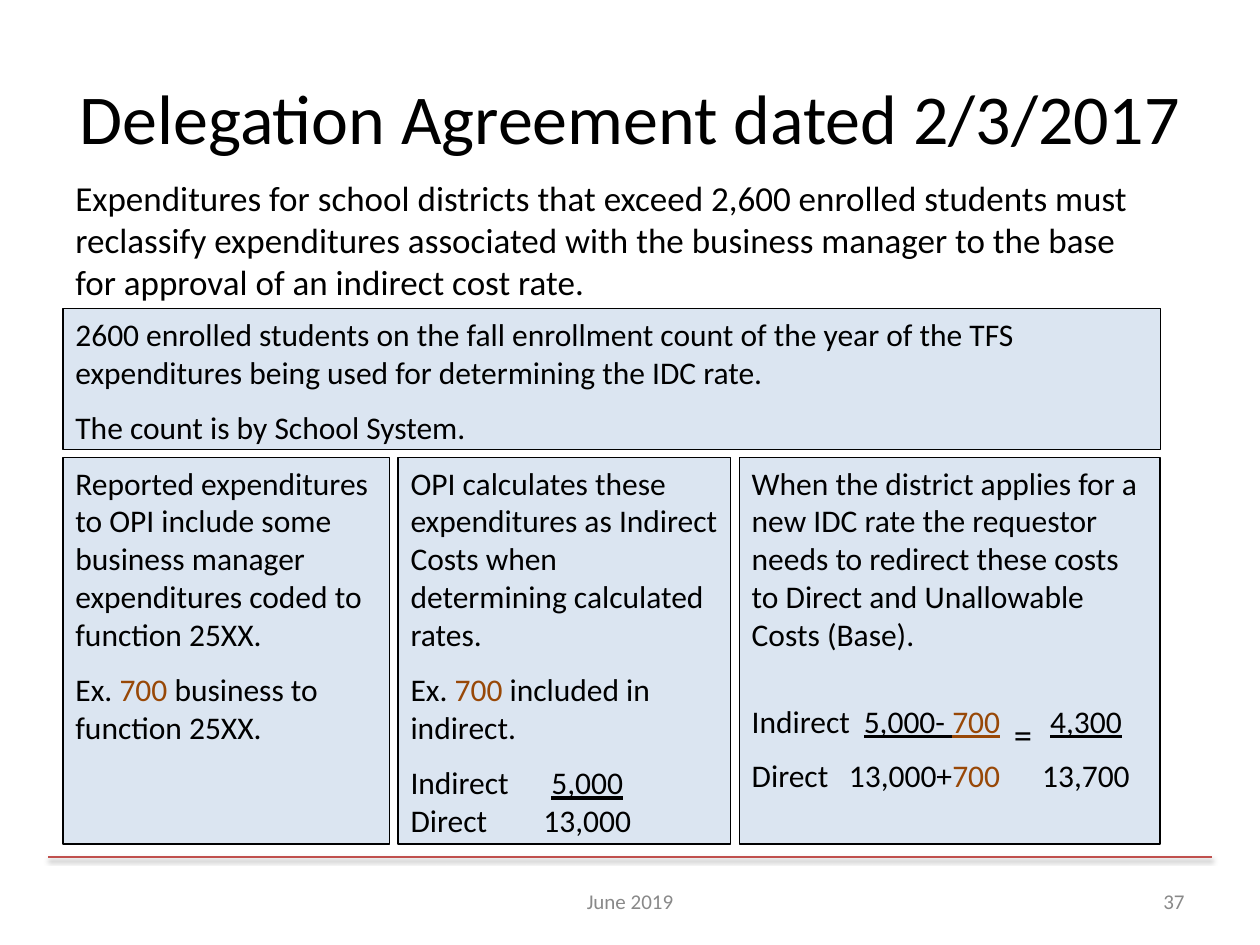
from lxml.etree import SubElement
from pptx import Presentation
from pptx.dml.color import RGBColor
from pptx.enum.shapes import MSO_CONNECTOR, MSO_SHAPE
from pptx.enum.text import MSO_ANCHOR, PP_ALIGN
from pptx.oxml.ns import qn
from pptx.util import Pt

BLACK = RGBColor(0x00, 0x00, 0x00)
GREY = RGBColor(0x89, 0x89, 0x89)
PALE_BLUE = RGBColor(0xDB, 0xE5, 0xF1)
BROWN = RGBColor(0x98, 0x48, 0x07)
RED = RGBColor(0xC0, 0x50, 0x4D)
FONT = "Calibri"

# Content: a paragraph is a list of (text, style) pieces; "\n" breaks the line
TITLE = "Delegation Agreement dated 2/3/2017"
INTRO = ("Expenditures for school districts that exceed 2,600 enrolled students must "
         "reclassify expenditures associated with the business manager to the base "
         "for approval of an indirect cost rate.")
COUNT_RULE = [
    [("2600 enrolled students on the fall enrollment count of the year of the TFS "
      "expenditures being used for determining the IDC rate.", "")],
    [("The count is by School System.", "")],
]
REPORTED = [
    [("Reported expenditures to OPI include some business manager expenditures "
      "coded to function 25XX.", "")],
    [("Ex. ", ""), ("700", "brown"), (" business to function 25XX.", "")],
]
CALCULATED = [
    [("OPI calculates these expenditures as Indirect Costs when determining "
      "calculated rates.", "")],
    [("Ex. ", ""), ("700", "brown"), (" included in indirect.", "")],
    [("Indirect\t", ""), ("5,000", "underline"), ("\n", ""), ("Direct\t13,000", "")],
]
REDIRECTED = [
    [("When the district applies for a new IDC rate the requestor needs to redirect "
      "these costs to Direct and Unallowable Costs (Base).", "")],
    [("Indirect\t", ""), ("5,000- ", "underline"), ("700", "brown underline"),
     ("\t", ""), ("=", "equals"), ("\t", ""), ("4,300", "underline"), ("\n", ""),
     ("Direct\t13,000+", ""), ("700", "brown"), ("\t\t13,700", "")],
]
# Columns: paragraphs, width, tab stops of the fraction
COLUMNS = [
    (REPORTED, 186.5, []),
    (CALCULATED, 190, [(101, "ctr")]),
    (REDIRECTED, 240.5, [(142, "r"), (155, "ctr"), (191, "ctr")]),
]
# Footer: text, left, alignment
FOOTER = [("June 2019", 276, PP_ALIGN.CENTER), ("37", 516, PP_ALIGN.RIGHT)]

LEFT, GAP = 36, 5
COUNT_TOP, COUNT_HEIGHT = 176.4, 80.6
COLUMN_TOP, COLUMN_HEIGHT = 261.4, 221
FULL_WIDTH = sum(width for _, width, _ in COLUMNS) + GAP * (len(COLUMNS) - 1)


def set_font(font, size, color):
    font.name, font.size = FONT, Pt(size)
    font.color.rgb = color


def add_label(slide, text, box, size, color, align, anchor):
    frame = slide.shapes.add_textbox(*map(Pt, box)).text_frame
    frame.word_wrap = True
    frame.vertical_anchor = anchor
    frame.text = text
    frame.paragraphs[0].alignment = align
    set_font(frame.paragraphs[0].runs[0].font, size, color)


def add_tabs(paragraph, stops):
    tab_list = SubElement(paragraph._p.get_or_add_pPr(), qn("a:tabLst"))
    for position, align in stops:
        SubElement(tab_list, qn("a:tab"), pos=str(Pt(position)), algn=align)


def add_piece(paragraph, text, style):
    if text == "\n":
        paragraph.add_line_break()
        return
    run = paragraph.add_run()
    run.text = text
    set_font(run.font, 36 if style == "equals" else 18,
             BROWN if "brown" in style else BLACK)
    if "underline" in style:
        run.font.underline = True
    if style == "equals":
        run._r.get_or_add_rPr().set("baseline", "-24000")


def add_panel(slide, paragraphs, box, stops=()):
    panel = slide.shapes.add_shape(MSO_SHAPE.RECTANGLE, *map(Pt, box))
    panel.shadow.inherit = False
    panel.fill.solid()
    panel.fill.fore_color.rgb = PALE_BLUE
    panel.line.color.rgb = BLACK
    panel.line.width = Pt(0.75)
    frame = panel.text_frame
    frame.word_wrap = True
    frame.vertical_anchor = MSO_ANCHOR.TOP
    for index, pieces in enumerate(paragraphs):
        paragraph = frame.add_paragraph() if index else frame.paragraphs[0]
        paragraph.alignment = PP_ALIGN.LEFT
        paragraph.space_after = Pt(10)
        if stops and any("\t" in text for text, _ in pieces):
            add_tabs(paragraph, stops)
        for text, style in pieces:
            add_piece(paragraph, text, style)


def add_footer_rule(slide):
    rule = slide.shapes.add_connector(MSO_CONNECTOR.STRAIGHT,
                                      Pt(27.5), Pt(489.6), Pt(692.5), Pt(489.6))
    rule.line.color.rgb = RED
    rule.line.width = Pt(1)
    effects = SubElement(rule._element.spPr, qn("a:effectLst"))
    shadow = SubElement(effects, qn("a:outerShdw"), blurRad=str(Pt(3.1)),
                        dist=str(Pt(1.6)), dir="5400000", rotWithShape="0")
    shade = SubElement(shadow, qn("a:srgbClr"), val=str(BLACK))
    SubElement(shade, qn("a:alpha"), val="38000")


def main():
    deck = Presentation()
    deck.slide_width, deck.slide_height = Pt(720), Pt(540)
    slide = deck.slides.add_slide(deck.slide_layouts[5])

    # Title and introduction
    title = slide.shapes.title
    title.left, title.top, title.width, title.height = map(Pt, (LEFT, 21.6, 648, 90))
    title.text_frame.text = TITLE
    title.text_frame.vertical_anchor = MSO_ANCHOR.MIDDLE
    title.text_frame.paragraphs[0].alignment = PP_ALIGN.CENTER
    set_font(title.text_frame.paragraphs[0].runs[0].font, 40, BLACK)
    add_label(slide, INTRO, (LEFT, 97.2, 623, 80), 20, BLACK,
              PP_ALIGN.LEFT, MSO_ANCHOR.TOP)

    # Full-width panel, then the three columns below it
    add_panel(slide, COUNT_RULE, (LEFT, COUNT_TOP, FULL_WIDTH, COUNT_HEIGHT))
    left = LEFT
    for paragraphs, width, stops in COLUMNS:
        add_panel(slide, paragraphs, (left, COLUMN_TOP, width, COLUMN_HEIGHT), stops)
        left += width + GAP

    # Footer
    for text, footer_left, align in FOOTER:
        add_label(slide, text, (footer_left, 500.4, 168, 28.8), 12, GREY,
                  align, MSO_ANCHOR.MIDDLE)
    add_footer_rule(slide)
    deck.save("out.pptx")


if __name__ == "__main__":
    main()
